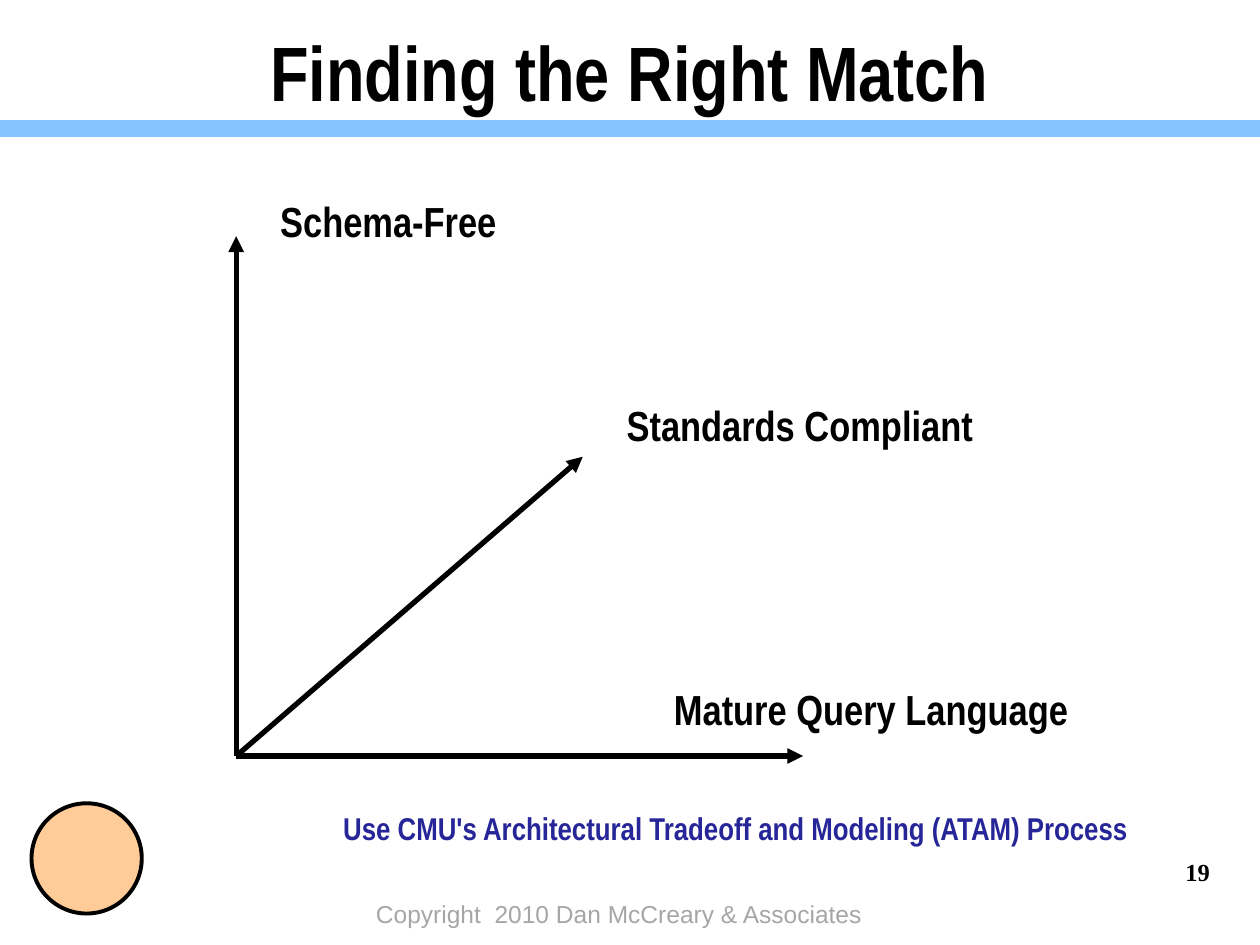
"""Build the slide "Finding the Right Match" on a grid of 80 columns by 60 rows."""
from lxml import etree
from pptx import Presentation, util as u
from pptx.dml.color import RGBColor
from pptx.enum import shapes, text
from pptx.oxml.ns import qn

BLACK = RGBColor(0x00, 0x00, 0x00)
SKY = RGBColor(0x85, 0xC2, 0xFF)
NAVY = RGBColor(0x26, 0x26, 0x99)
GREY = RGBColor(0xA6, 0xA6, 0xA6)
PEACH = RGBColor(0xFF, 0xCC, 0x99)
LEFT, CENTER, RIGHT = text.PP_ALIGN.LEFT, text.PP_ALIGN.CENTER, text.PP_ALIGN.RIGHT
TOP, MIDDLE = text.MSO_ANCHOR.TOP, text.MSO_ANCHOR.MIDDLE

deck = Presentation()
deck.slide_width, deck.slide_height = u.Inches(10), u.Inches(7.5)
slide = deck.slides.add_slide(deck.slide_layouts[6])
UNIT = deck.slide_width // 80


def add_label(words, col, row, cols, rows, size, color=BLACK, font="Arial Narrow",
              bold=True, align=LEFT, anchor=TOP, wrap=False):
    label = slide.shapes.add_textbox(*(int(n * UNIT) for n in (col, row, cols, rows)))
    frame = label.text_frame
    frame.text = words
    frame.word_wrap = wrap
    frame.vertical_anchor = anchor
    frame.paragraphs[0].alignment = align
    run_font = frame.paragraphs[0].runs[0].font
    run_font.name, run_font.size, run_font.bold = font, u.Pt(size), bold
    run_font.color.rgb = color


def add_line(start, end, color, width, arrow=True):
    line = slide.shapes.add_connector(
        shapes.MSO_CONNECTOR.STRAIGHT, *(int(n * UNIT) for n in start + end))
    line.line.color.rgb, line.line.width = color, u.Pt(width)
    if arrow:
        etree.SubElement(line.line._get_or_add_ln(), qn("a:tailEnd"), type="triangle")
    etree.SubElement(line._element.spPr, qn("a:effectLst"))


emblem = slide.shapes.add_shape(
    shapes.MSO_SHAPE.OVAL, 2 * UNIT, 51 * UNIT, 7 * UNIT, 7 * UNIT)
emblem.shadow.inherit = False
emblem.fill.solid()
emblem.fill.fore_color.rgb = PEACH
emblem.line.color.rgb, emblem.line.width = BLACK, u.Pt(2.25)

add_line((0, 8.16), (80, 8.16), SKY, 10, arrow=False)
add_label("Finding the Right Match", 6, 1, 68, 7, 44, align=CENTER, anchor=MIDDLE, wrap=True)
add_label("19", 73, 54, 4.6, 4, 14, font="Times New Roman", align=RIGHT, wrap=True)
add_label("Copyright  2010 Dan McCreary & Associates", 21, 56, 36.6, 4, 14, GREY, "Arial",
          bold=False, align=CENTER, anchor=MIDDLE, wrap=True)

origin = (15, 48)
criteria = [
    ("Schema-Free", (15, 15), (17, 12), 15.5),
    ("Mature Query Language", (51, 48), (42, 43), 26.9),
    ("Standards Compliant", (37, 29), (39, 25), 23.8),
]
for criterion, tip, corner, cols in criteria:
    add_line(origin, tip, BLACK, 3)
    add_label(criterion, *corner, cols, 4, 24)

add_label("Use CMU's Architectural Tradeoff and Modeling (ATAM) Process",
          21, 51, 51.5, 3.2, 18, NAVY)

deck.save("out.pptx")
